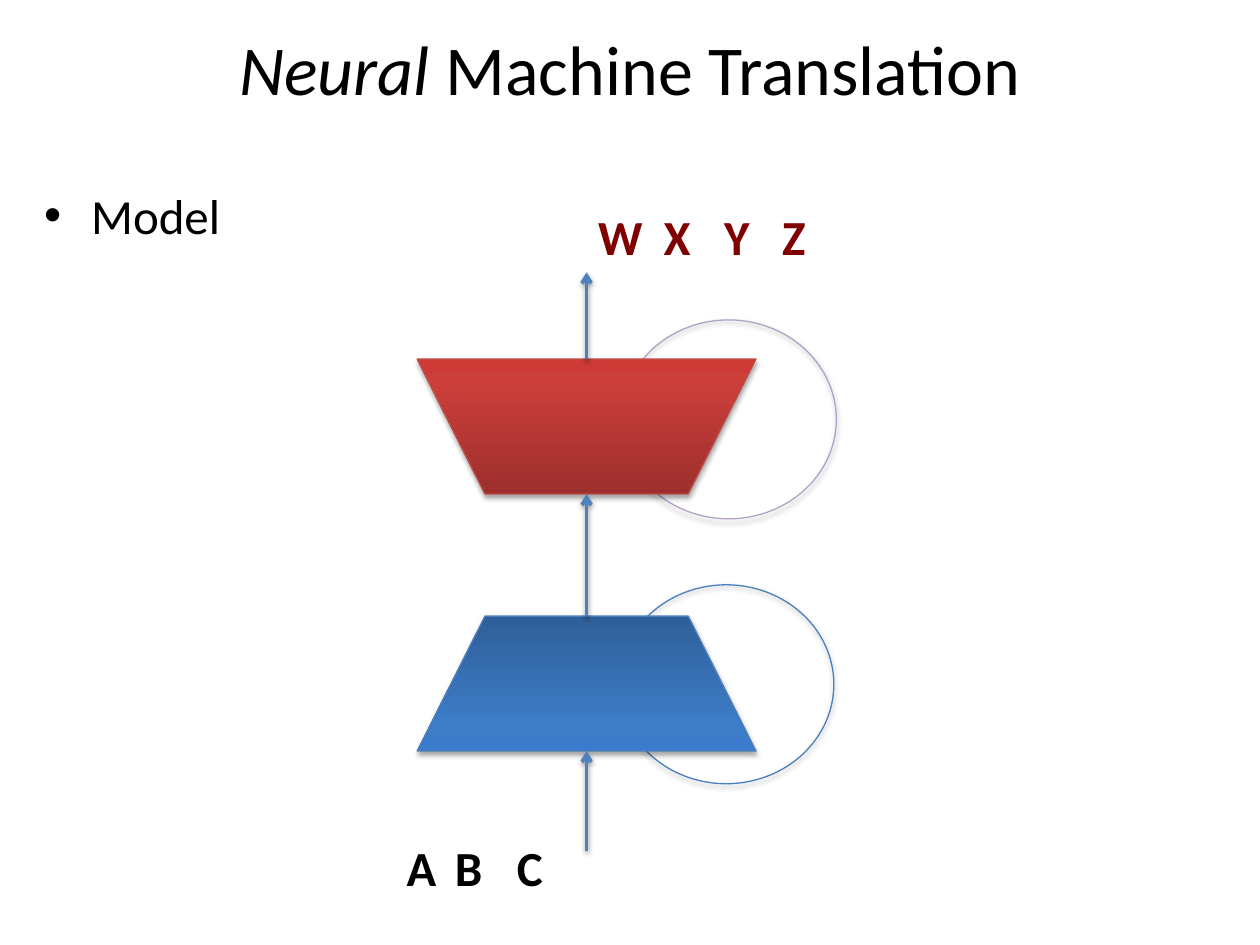
from lxml import etree
from pptx import Presentation
from pptx import util as u
from pptx.dml.color import RGBColor
from pptx.enum import shapes, text
from pptx.oxml import parse_xml
from pptx.oxml.ns import qn

Cm, Pt = u.Cm, u.Pt
NAMESPACE = "http://schemas.openxmlformats.org/drawingml/2006/main"

TITLE = [("Neural ", True), ("Machine Translation", False)]
BULLET = "Model"
SEQUENCES = [
    (("A", "B", "C"), "000000", (7.95, 16.76, 3.86, 1.45), (0.97, 2.22)),
    (("W", "X", "Y", "Z"), "800000", (11.81, 4.04, 5.03, 1.45), (1.32, 2.54, 3.71)),
]
LOOPS = [(12.52, 6.45, "B3A2C7"), (12.47, 11.79, "4B7EBC")]
LOOP_SIZE = (4.34, 4.01)
DECODER_TOP, ENCODER_TOP = 7.24, 12.42
BLOCKS = [
    (ENCODER_TOP, 180, ("2F5F99", "3D7CC7", "3A7CCB"), "4B7EBC"),
    (DECODER_TOP, 0, ("9C2F2D", "CB3E3A", "CE3B37"), "BF4C48"),
]
BLOCK_LEFT, BLOCK_WIDTH, BLOCK_HEIGHT = 8.41, 6.83, 2.72
ARROWS = [
    (ENCODER_TOP, DECODER_TOP + BLOCK_HEIGHT),
    (17.15, ENCODER_TOP + BLOCK_HEIGHT),
    (DECODER_TOP, 5.49),
]


def color(value):
    return RGBColor.from_string(value)


def add_shadow(shape, distance, opacity):
    properties = shape._element.spPr
    for effects in properties.findall(qn("a:effectLst")):
        properties.remove(effects)
    properties.append(parse_xml(
        f'<a:effectLst xmlns:a="{NAMESPACE}"><a:outerShdw blurRad="{Pt(3.1)}" '
        f'dist="{Pt(distance)}" dir="5400000" rotWithShape="0"><a:srgbClr val="000000">'
        f'<a:alpha val="{opacity * 1000}"/></a:srgbClr></a:outerShdw></a:effectLst>'))


def set_line(shape, value, width):
    shape.line.color.rgb = color(value)
    shape.line.width = Pt(width)


def set_gradient(shape, colors):
    shape.fill.gradient()
    shape.fill.gradient_angle = 90
    stops = shape._element.spPr.find(qn("a:gradFill")).find(qn("a:gsLst"))
    for stop in list(stops):
        stops.remove(stop)
    for position, value in zip((0, 80, 100), colors):
        stop = etree.SubElement(stops, qn("a:gs"), pos=str(position * 1000))
        etree.SubElement(stop, qn("a:srgbClr"), val=value)


def add_shape(slide, kind, box, line_color):
    shape = slide.shapes.add_shape(kind, *map(Cm, box))
    shape.shadow.inherit = False
    set_line(shape, line_color, 0.75)
    add_shadow(shape, 1.8, 35)
    return shape


def add_text(slide, box):
    frame = slide.shapes.add_textbox(*map(Cm, box)).text_frame
    frame.word_wrap = True
    return frame, frame.paragraphs[0]


def set_font(paragraph, size, value="000000", bold=False):
    font = paragraph.font
    font.name, font.size, font.bold = "Calibri", Pt(size), bold
    font.color.rgb = color(value)


def add_arrow(slide, start, end):
    center = Cm(BLOCK_LEFT + BLOCK_WIDTH / 2)
    arrow = slide.shapes.add_connector(
        shapes.MSO_CONNECTOR.STRAIGHT, center, Cm(start), center, Cm(end))
    set_line(arrow, "4F81BD", 2)
    etree.SubElement(arrow.line._get_or_add_ln(), qn("a:tailEnd"), type="arrow")
    add_shadow(arrow, 1.6, 38)


def add_title(slide):
    frame, paragraph = add_text(slide, (0, 0, 25.4, 2.74))
    frame.vertical_anchor = text.MSO_ANCHOR.MIDDLE
    paragraph.alignment = text.PP_ALIGN.CENTER
    for words, italic in TITLE:
        run = paragraph.add_run()
        run.text, run.font.italic = words, italic
    set_font(paragraph, 40)


def add_bullet(slide):
    paragraph = add_text(slide, (0.64, 3.61, 24.13, 14.6))[1]
    paragraph.text = BULLET
    properties = paragraph._p.get_or_add_pPr()
    properties.set("marL", str(Cm(0.95)))
    properties.set("indent", str(Cm(-0.95)))
    etree.SubElement(properties, qn("a:buFont"), typeface="Arial")
    etree.SubElement(properties, qn("a:buChar"), char="•")
    set_font(paragraph, 28)


def add_sequence(slide, letters, value, box, stops):
    paragraph = add_text(slide, box)[1]
    paragraph.text = "\t".join(letters)
    tabs = etree.SubElement(paragraph._p.get_or_add_pPr(), qn("a:tabLst"))
    for stop in stops:
        etree.SubElement(tabs, qn("a:tab"), pos=str(Cm(stop)), algn="l")
    set_font(paragraph, 28, value, True)


def main():
    presentation = Presentation()
    presentation.slide_width, presentation.slide_height = Cm(25.4), Cm(19.05)
    slide = presentation.slides.add_slide(presentation.slide_layouts[6])
    for left, top, line_color in LOOPS:
        loop = add_shape(slide, shapes.MSO_SHAPE.OVAL, (left, top, *LOOP_SIZE), line_color)
        loop.fill.background()
    add_title(slide)
    add_bullet(slide)
    for top, rotation, colors, line_color in BLOCKS:
        box = (BLOCK_LEFT, top, BLOCK_WIDTH, BLOCK_HEIGHT)
        block = add_shape(
            slide, shapes.MSO_SHAPE.FLOWCHART_MANUAL_OPERATION, box, line_color)
        block.rotation = rotation
        set_gradient(block, colors)
    for start, end in ARROWS:
        add_arrow(slide, start, end)
    for sequence in SEQUENCES:
        add_sequence(slide, *sequence)
    presentation.save("out.pptx")


if __name__ == "__main__":
    main()
